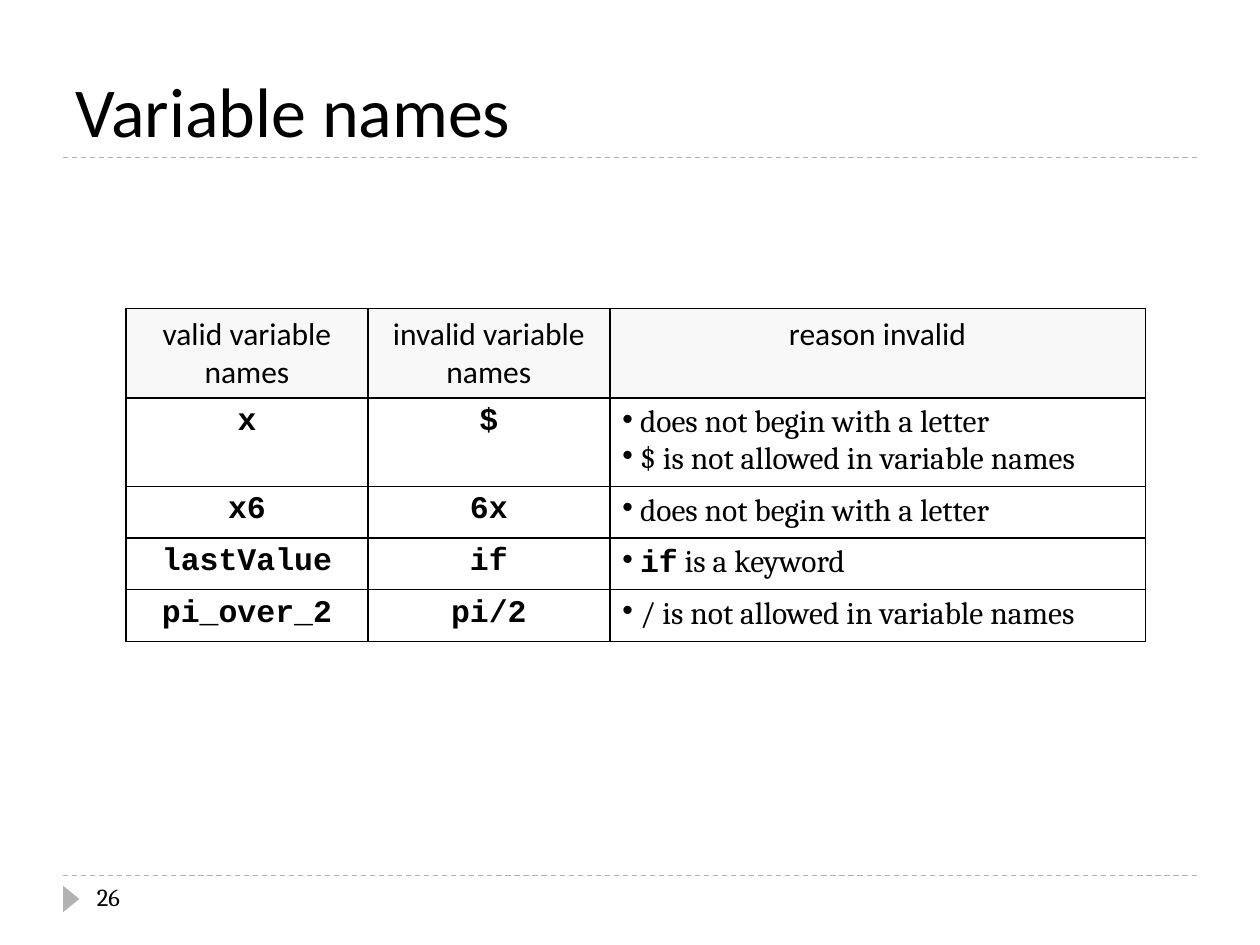
from dataclasses import dataclass

from lxml.etree import SubElement
from pptx import Presentation
from pptx.dml.color import RGBColor
from pptx.enum.dml import MSO_LINE
from pptx.enum.shapes import MSO_CONNECTOR, MSO_SHAPE
from pptx.enum.text import MSO_ANCHOR, MSO_AUTO_SIZE, PP_ALIGN
from pptx.oxml.ns import qn
from pptx.util import Inches, Pt


@dataclass(frozen=True)
class Theme:
    """Colours, fonts and type sizes of the slide."""
    ink: RGBColor = RGBColor(0, 0, 0)
    rule: RGBColor = RGBColor(0xB2, 0xB2, 0xB2)
    header: RGBColor = RGBColor(0xF8, 0xF8, 0xF8)
    paper: RGBColor = RGBColor(0xFF, 0xFF, 0xFF)
    heading: str = "Calibri"
    body: str = "Cambria"
    code: str = "Courier New"
    title_size: Pt = Pt(40)
    table_size: Pt = Pt(18)
    number_size: Pt = Pt(14)


THEME = Theme()
HEADERS = ["valid variable names", "invalid variable names", "reason invalid"]
NAMES = [
    ("x", "$", [["does not begin with a letter"],
                ["$ is not allowed in variable names"]]),
    ("x6", "6x", [["does not begin with a letter"]]),
    ("lastValue", "if", [["", "if", " is a keyword"]]),
    ("pi_over_2", "pi/2", [["/ is not allowed in variable names"]]),
]
COLUMN_WIDTHS = [1.92, 1.92, 4.25]
ROW_HEIGHTS = [0.71, 0.68, 0.41, 0.41, 0.41]


def style_font(font, name, size, bold=False):
    """Set a font's face, size and weight in the ink colour."""
    font.name, font.size, font.bold = name, size, bold
    font.color.rgb = THEME.ink


def add_title(page, text):
    """Place and format the title placeholder."""
    title = page.shapes.title
    title.left, title.top = Inches(0.5), Inches(0.17)
    title.width, title.height = Inches(9), Inches(1.08)
    frame = title.text_frame
    frame.text = text
    frame.auto_size = MSO_AUTO_SIZE.NONE
    frame.vertical_anchor = MSO_ANCHOR.BOTTOM
    para = frame.paragraphs[0]
    para.alignment = PP_ALIGN.LEFT
    style_font(para.font, THEME.heading, THEME.title_size)


def add_rule(page, top):
    """Draw a dashed rule across the page."""
    rule = page.shapes.add_connector(
        MSO_CONNECTOR.STRAIGHT, Inches(0.5), Inches(top), Inches(9.5), Inches(top))
    rule.line.color.rgb = THEME.rule
    rule.line.width = Pt(0.75)
    rule.line.dash_style = MSO_LINE.DASH
    SubElement(rule._element.spPr, qn("a:effectLst"))


def add_page_number(page, number):
    """Add the page number and the triangle that points to it."""
    marker = page.shapes.add_shape(
        MSO_SHAPE.ISOSCELES_TRIANGLE, Inches(0.46), Inches(7.07), Inches(0.21), Inches(0.13))
    marker.rotation = 90
    marker.shadow.inherit = False
    marker.fill.solid()
    marker.fill.fore_color.rgb = THEME.rule
    marker.line.fill.background()
    box = page.shapes.add_textbox(Inches(0.67), Inches(6.95), Inches(2.17), Inches(0.4))
    box.text_frame.word_wrap = True
    box.text_frame.text = number
    style_font(box.text_frame.paragraphs[0].font, THEME.body, THEME.number_size)


def format_cell(cell, color):
    """Give a cell black borders on all sides and a solid fill."""
    properties = cell._tc.get_or_add_tcPr()
    for side in ("lnL", "lnR", "lnT", "lnB"):
        border = SubElement(properties, qn(f"a:{side}"), w=str(Pt(1)))
        fill = SubElement(border, qn("a:solidFill"))
        SubElement(fill, qn("a:srgbClr"), val=str(THEME.ink))
    cell.fill.solid()
    cell.fill.fore_color.rgb = color


def fill_centred(cell, text, font_name, color, bold=False):
    """Write one centred paragraph into a cell."""
    format_cell(cell, color)
    cell.text = text
    para = cell.text_frame.paragraphs[0]
    para.alignment = PP_ALIGN.CENTER
    style_font(para.font, font_name, THEME.table_size, bold)


def fill_reasons(cell, reasons):
    """Write bulleted reasons, where every second piece is code."""
    format_cell(cell, THEME.paper)
    frame = cell.text_frame
    for index, pieces in enumerate(reasons):
        para = frame.add_paragraph() if index else frame.paragraphs[0]
        style_font(para.font, THEME.body, THEME.table_size)
        properties = para._p.get_or_add_pPr()
        properties.set("marL", str(Inches(0.14)))
        properties.set("indent", str(-Inches(0.14)))
        bullet = SubElement(properties, qn("a:buChar"), char="•")
        properties.insert(0, bullet)
        for position, piece in enumerate(pieces):
            if piece:
                span = para.add_run()
                span.text = piece
                is_code = position % 2 == 1
                style_font(span.font, THEME.code if is_code else THEME.body,
                           THEME.table_size, is_code)


def add_names_table(page):
    """Add the table of valid and invalid variable names."""
    table = page.shapes.add_table(
        len(ROW_HEIGHTS), len(COLUMN_WIDTHS), Inches(1), Inches(2.45),
        Inches(sum(COLUMN_WIDTHS)), Inches(sum(ROW_HEIGHTS))).table
    table.first_row = table.horz_banding = False
    for column, width in zip(table.columns, COLUMN_WIDTHS):
        column.width = Inches(width)
    for row, height in zip(table.rows, ROW_HEIGHTS):
        row.height = Inches(height)
    for column, header in enumerate(HEADERS):
        fill_centred(table.cell(0, column), header, THEME.heading, THEME.header)
    for row, (valid, invalid, reasons) in enumerate(NAMES, start=1):
        for column, name in enumerate((valid, invalid)):
            fill_centred(table.cell(row, column), name, THEME.code, THEME.paper, bold=True)
        fill_reasons(table.cell(row, 2), reasons)


def main():
    """Build the slide and save the deck."""
    deck = Presentation()
    deck.slide_width, deck.slide_height = Inches(10), Inches(7.5)
    page = deck.slides.add_slide(deck.slide_layouts[5])
    for top in (6.95, 1.25):
        add_rule(page, top)
    add_title(page, "Variable names")
    add_page_number(page, "26")
    add_names_table(page)
    deck.save("out.pptx")


if __name__ == "__main__":
    main()
